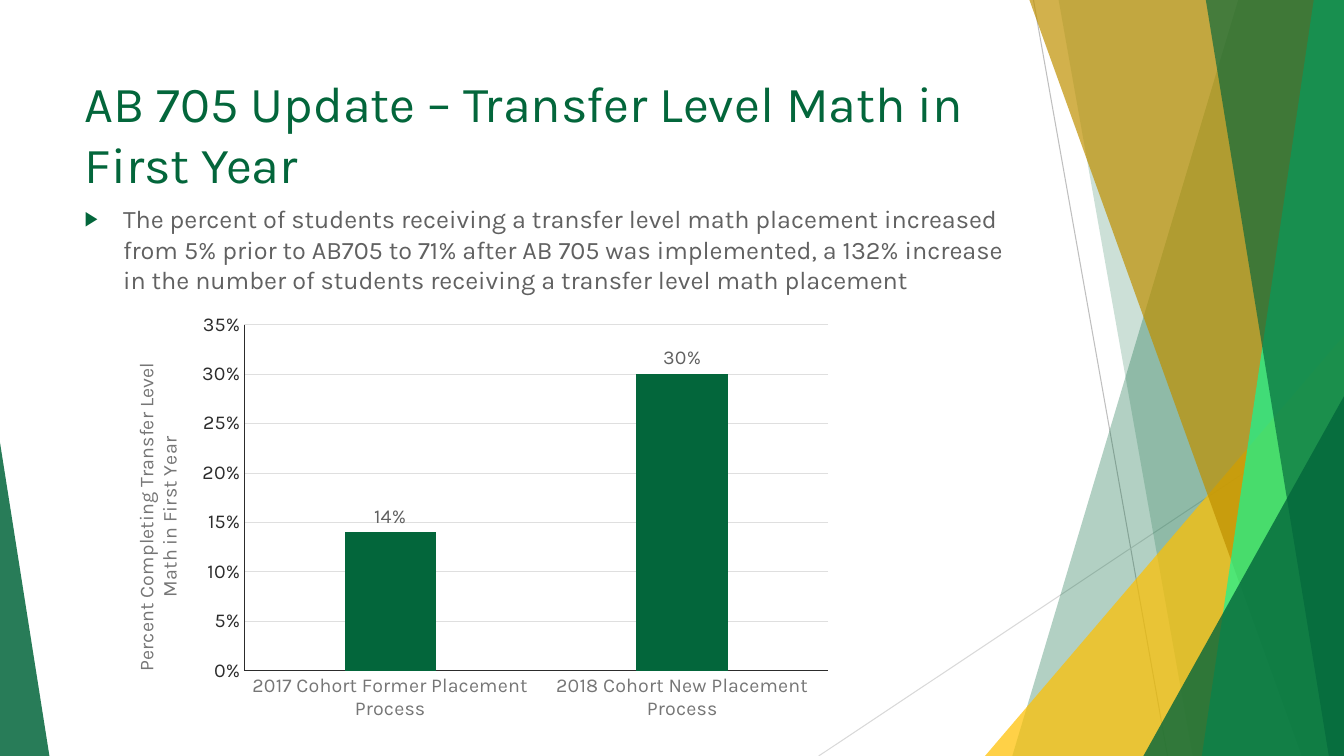
"""Build the AB 705 transfer level math slide."""
from dataclasses import dataclass

from lxml import etree
from pptx import Presentation
from pptx import util as u
from pptx.chart.data import CategoryChartData
from pptx.dml.color import RGBColor
from pptx.enum import chart as chart_enum
from pptx.enum import shapes, text
from pptx.oxml.ns import qn

EMU_PER_PX = 9144
SLIDE_WIDTH, SLIDE_HEIGHT = 1333, 750
FONT = "Karla"

GREEN = RGBColor(0x03, 0x66, 0x3B)
MINT = RGBColor(0x13, 0xF8, 0x95)
AMBER = RGBColor(0xFF, 0xC0, 0x00)
OCHRE = RGBColor(0xBF, 0x90, 0x00)
BODY_GRAY = RGBColor(0x61, 0x61, 0x61)
LABEL_GRAY = RGBColor(0x76, 0x76, 0x76)
AXIS_BLACK = RGBColor(0x2C, 0x2C, 0x2C)
GRID_GRAY = RGBColor(0xDF, 0xDF, 0xDF)
RAY_DARK = RGBColor(0xBF, 0xBF, 0xBF)
RAY_LIGHT = RGBColor(0xD9, 0xD9, 0xD9)


@dataclass(frozen=True)
class Ray:
    """A thin line across the slide."""
    start: tuple[int, int]
    end: tuple[int, int]
    color: RGBColor


@dataclass(frozen=True)
class Band:
    """A full-height panel between a slanted edge and the right side."""
    top_left: int
    bottom_left: int
    color: RGBColor
    opacity: int


@dataclass(frozen=True)
class Corner:
    """A triangle standing on the bottom edge, apex at 0 (left) or 1 (right)."""
    left: int
    top: int
    width: int
    apex: int
    color: RGBColor
    opacity: int


RAYS = [
    Ray((1025, 0), (1158, 750), RAY_DARK),
    Ray((1333, 403), (812, 750), RAY_LIGHT),
]
FACETS = [
    Band(1228, 1004, GREEN, 30),
    Band(1050, 1183, GREEN, 20),
    Corner(977, 333, 356, 1, AMBER, 72),
    Band(1021, 1291, OCHRE, 70),
    Band(1303, 1192, MINT, 70),
    Band(1196, 1318, GREEN, 65),
    Corner(1134, 393, 199, 1, GREEN, 80),
    Corner(0, 439, 49, 0, GREEN, 85),
]
COHORTS = {
    "2017 Cohort Former Placement Process": 0.14,
    "2018 Cohort New Placement Process": 0.30,
}
TITLE = "AB 705 Update – Transfer Level Math in First Year"
BODY = (
    "The percent of students receiving a transfer level math placement increased "
    "from 5% prior to AB705 to 71% after AB 705 was implemented, a 132% increase "
    "in the number of students receiving a transfer level math placement"
)
AXIS_TITLE = "Percent Completing Transfer Level Math in First Year"


def px(length: int) -> u.Emu:
    """Turn pixels into EMU."""
    return u.Emu(length * EMU_PER_PX)


def style_font(font, size: int, color: RGBColor) -> None:
    """Apply the slide's typeface with a size and colour."""
    font.name, font.size, font.bold = FONT, u.Pt(size), False
    font.color.rgb = color


def draw_ray(slide, ray: Ray) -> None:
    """Draw one thin line."""
    line = slide.shapes.add_connector(
        shapes.MSO_CONNECTOR.STRAIGHT, *map(px, ray.start + ray.end))
    line.line.color.rgb, line.line.width = ray.color, u.Pt(0.75)
    etree.SubElement(line._element.spPr, qn("a:effectLst"))


def draw_facet(slide, facet: Band | Corner) -> None:
    """Draw one translucent panel."""
    if isinstance(facet, Band):
        builder = slide.shapes.build_freeform(facet.top_left, 0, scale=EMU_PER_PX)
        builder.add_line_segments([
            (SLIDE_WIDTH, 0), (SLIDE_WIDTH, SLIDE_HEIGHT),
            (facet.bottom_left, SLIDE_HEIGHT)], close=True)
        shape = builder.convert_to_shape()
    else:
        shape = slide.shapes.add_shape(
            shapes.MSO_SHAPE.ISOSCELES_TRIANGLE, px(facet.left), px(facet.top),
            px(facet.width), px(SLIDE_HEIGHT - facet.top))
        shape.adjustments[0] = facet.apex
    shape.shadow.inherit = False
    shape.line.fill.background()
    shape.fill.solid()
    shape.fill.fore_color.rgb = facet.color
    color = shape._element.spPr.find(qn("a:solidFill"))[0]
    etree.SubElement(color, qn("a:alpha"), val=str(facet.opacity * 1000))


def fill_placeholder(slide, index: int, box: tuple[int, int, int, int], words: str):
    """Place a placeholder above the panels and return its paragraph."""
    shape = slide.placeholders[index]
    slide.shapes._spTree.append(shape._element)
    shape.left, shape.top, shape.width, shape.height = map(px, box)
    frame = shape.text_frame
    frame.text = words
    frame.word_wrap = True
    frame.auto_size = text.MSO_AUTO_SIZE.NONE
    frame.vertical_anchor = text.MSO_ANCHOR.TOP
    paragraph = frame.paragraphs[0]
    paragraph.alignment = text.PP_ALIGN.LEFT
    paragraph.space_before = u.Pt(0)
    return paragraph


def add_bullet(paragraph) -> None:
    """Give a paragraph the green arrow bullet and hanging indent."""
    properties = paragraph._p.get_or_add_pPr()
    properties.set("marL", str(px(38)))
    properties.set("indent", str(px(-38)))
    color = etree.SubElement(properties, qn("a:buClr"))
    etree.SubElement(color, qn("a:srgbClr"), val=str(GREEN))
    etree.SubElement(properties, qn("a:buSzPct"), val="80000")
    etree.SubElement(properties, qn("a:buChar"), char="▶")


def fix_plot_area(chart) -> None:
    """Set the inner plot rectangle as fractions of the chart."""
    plot_area = chart._chartSpace.chart.plotArea
    for old in plot_area.findall(qn("c:layout")):
        plot_area.remove(old)
    layout = etree.Element(qn("c:layout"))
    plot_area.insert(0, layout)
    manual = etree.SubElement(layout, qn("c:manualLayout"))
    settings = {"layoutTarget": "inner", "xMode": "edge", "yMode": "edge",
                "x": 0.18, "y": 0.05, "w": 0.8, "h": 0.81}
    for name, value in settings.items():
        etree.SubElement(manual, qn(f"c:{name}"), val=str(value))


def add_cohort_chart(slide) -> None:
    """Add the column chart of completion by cohort."""
    data = CategoryChartData(number_format="0%")
    data.categories = list(COHORTS)
    data.add_series("Series 1", list(COHORTS.values()))
    chart = slide.shapes.add_chart(
        chart_enum.XL_CHART_TYPE.COLUMN_CLUSTERED,
        *map(px, (112, 301, 724, 424)), data).chart
    chart.has_legend = chart.has_title = False
    style_font(chart.font, 10, AXIS_BLACK)
    fix_plot_area(chart)

    plot = chart.plots[0]
    plot.gap_width, plot.overlap, plot.vary_by_categories = 219, -27, False
    columns = plot.series[0].format.fill
    columns.solid()
    columns.fore_color.rgb = GREEN
    plot.has_data_labels = True
    labels = plot.data_labels
    labels.show_value = True
    labels.number_format, labels.number_format_is_linked = "0%", False
    labels.position = chart_enum.XL_LABEL_POSITION.OUTSIDE_END
    style_font(labels.font, 14, BODY_GRAY)

    value_axis = chart.value_axis
    for axis, color in ((chart.category_axis, LABEL_GRAY), (value_axis, AXIS_BLACK)):
        axis.major_tick_mark = axis.minor_tick_mark = chart_enum.XL_TICK_MARK.NONE
        axis.format.line.color.rgb, axis.format.line.width = AXIS_BLACK, u.Pt(0.75)
        style_font(axis.tick_labels.font, 14, color)
    value_axis.minimum_scale, value_axis.maximum_scale = 0, 0.35
    value_axis.major_unit = 0.05
    grid = value_axis.major_gridlines.format.line
    grid.color.rgb, grid.width = GRID_GRAY, u.Pt(0.75)
    title = value_axis.axis_title.text_frame
    title.text = AXIS_TITLE
    style_font(title.paragraphs[0].font, 14, LABEL_GRAY)


def main() -> None:
    """Build and save the presentation."""
    presentation = Presentation()
    presentation.slide_width, presentation.slide_height = px(SLIDE_WIDTH), px(SLIDE_HEIGHT)
    slide = presentation.slides.add_slide(presentation.slide_layouts[1])
    for ray in RAYS:
        draw_ray(slide, ray)
    for facet in FACETS:
        draw_facet(slide, facet)
    title = fill_placeholder(slide, 0, (74, 67, 940, 144), TITLE)
    style_font(title.font, 36, GREEN)
    body = fill_placeholder(slide, 1, (74, 197, 940, 424), BODY)
    add_bullet(body)
    style_font(body.font, 18, BODY_GRAY)
    add_cohort_chart(slide)
    presentation.save("out.pptx")


if __name__ == "__main__":
    main()
